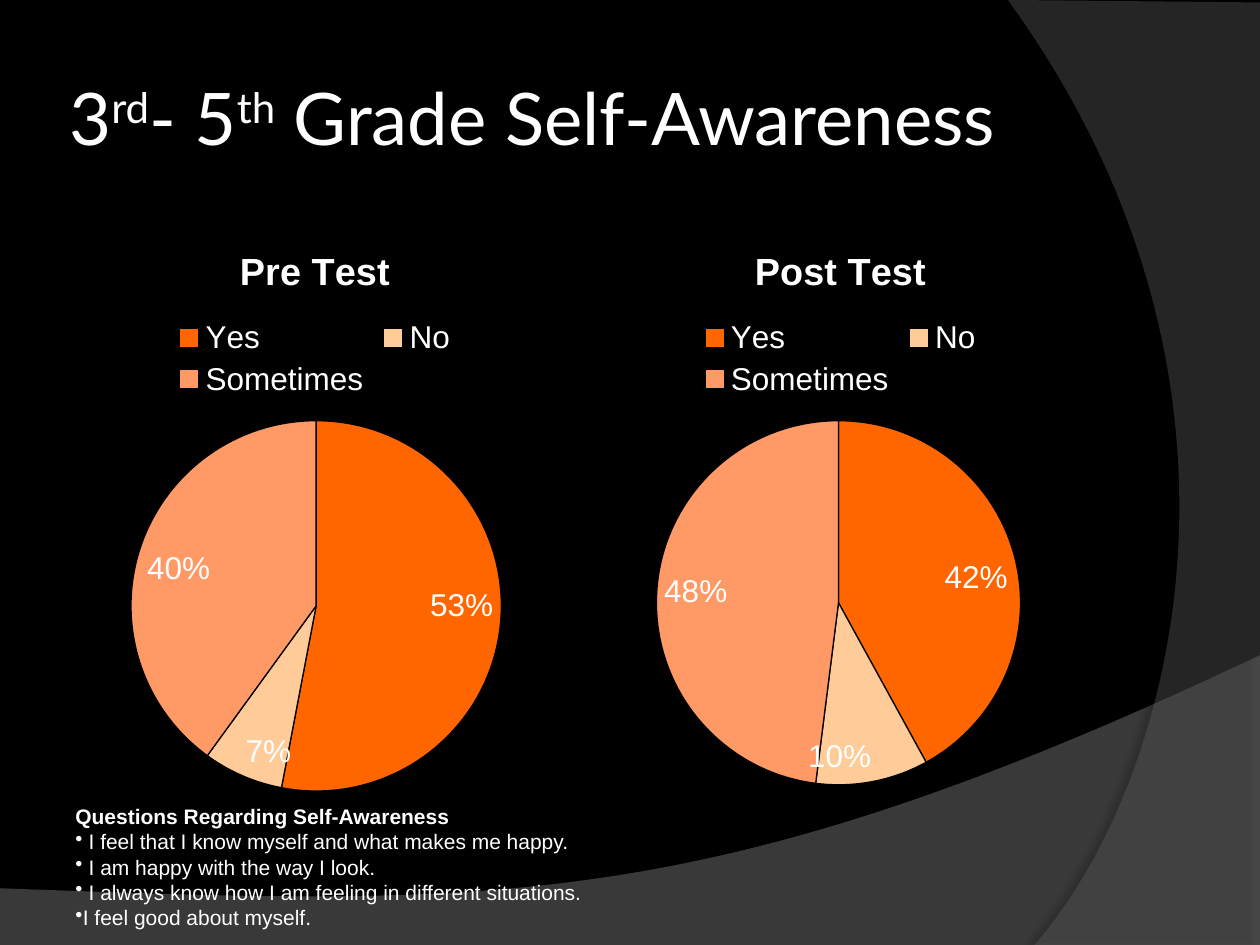
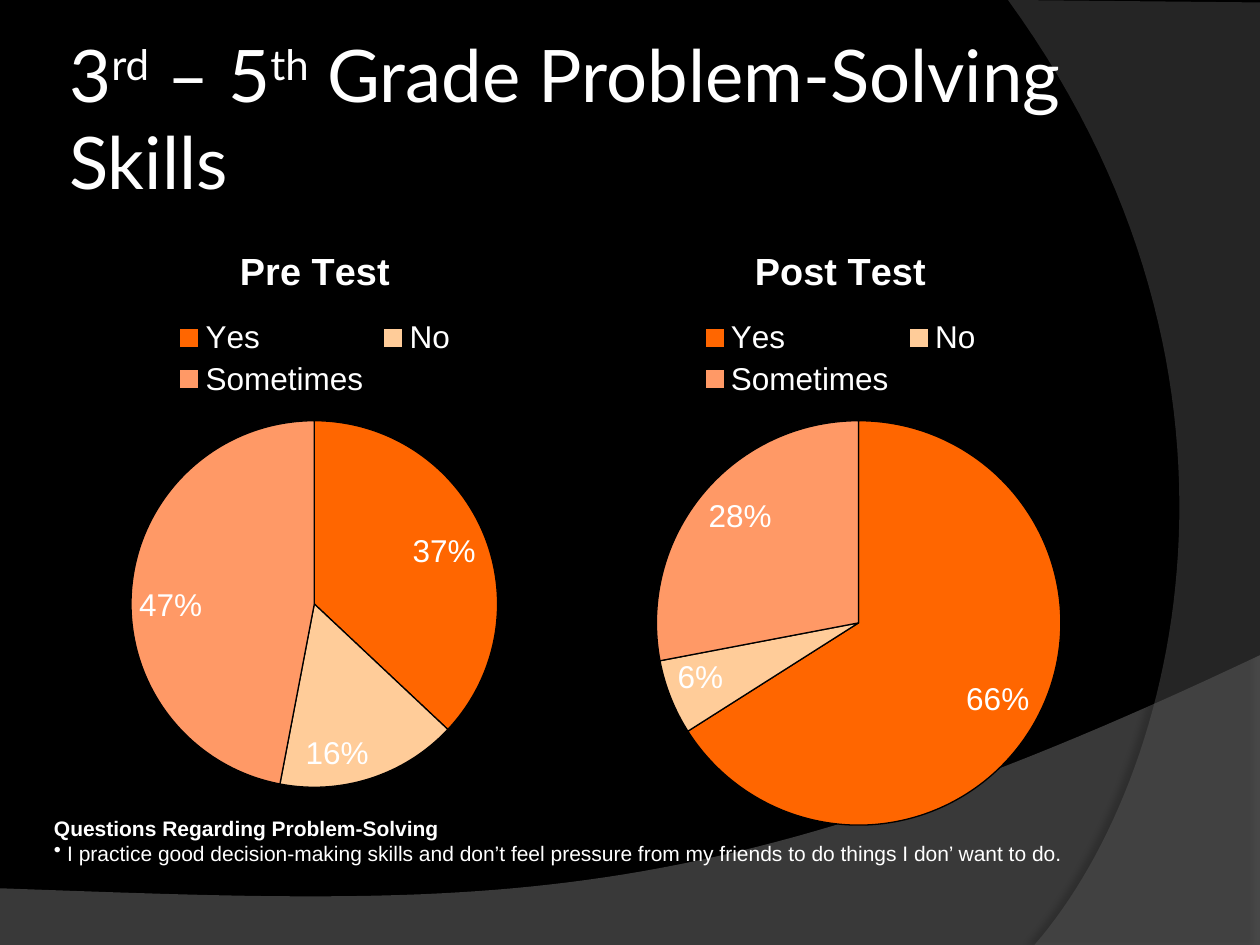
import pptx
import pptx.chart.data
import pptx.dml.color
import pptx.enum.chart
import pptx.enum.text
import pptx.oxml
import pptx.oxml.ns
import pptx.util
from lxml import etree

COLORS = {
    "back": "000000",
    "text": "FFFFFF",
    "wave": "7F7F7F",
    "arc": "5E5E5E",
    "Yes": "FF6600",
    "No": "FFCC99",
    "Sometimes": "FF9966",
}
ANSWERS = ["Yes", "No", "Sometimes"]
TITLE_FONT, BODY_FONT = "Lato", "Arial"
COLUMNS, ROWS = 100, 75
CELL = pptx.util.Inches(0.1)
TITLE_BOX = (5, 3, 81.7, 12.5)
CHART_BOXES = {"Pre Test": (5, 17.5, 40, 49.5), "Post Test": (46.7, 17.5, 40, 49.5)}
WAVE_BOX, ARC_BOX = (0, 52, 100, 23.1), (80, 0, 20, 75)

SLIDES = [
    {
        "title": ["3", "rd", "- 5", "th", " Grade Self-Awareness"],
        "tests": {"Pre Test": ([53, 7, 40], 29.4), "Post Test": ([42, 10, 48], 28.9)},
        "questions_box": (5, 63.3, 87.5, 11.1),
        "questions": [
            "Questions Regarding Self-Awareness",
            " I feel that I know myself and what makes me happy.",
            " I am happy with the way I look.",
            " I always know how I am feeling in different situations.",
            "I feel good about myself.",
        ],
    },
    {
        "title": ["3", "rd", " – 5", "th", " Grade Problem-Solving Skills"],
        "tests": {"Pre Test": ([37, 16, 47], 29.1), "Post Test": ([66, 6, 28], 32.1)},
        "questions_box": (3.3, 64.2, 85.8, 7.1),
        "questions": [
            "Questions Regarding Problem-Solving",
            " I practice good decision-making skills and don’t feel pressure"
            " from my friends to do things I don’ want to do.",
        ],
    },
]


def cells(values):
    return [pptx.util.Emu(round(value * CELL)) for value in values]


def rgb(name):
    return pptx.dml.color.RGBColor.from_string(COLORS[name])


def style(font, size, name=BODY_FONT, bold=False):
    font.size = pptx.util.Pt(size)
    font.name = name
    font.bold = bold
    font.color.rgb = rgb("text")


def add_child(parent, tag, **attributes):
    child = etree.SubElement(parent, pptx.oxml.ns.qn(tag))
    for key, value in attributes.items():
        child.set(key, str(value))
    return child


def curve(start, first, second, end, steps=60):
    for step in range(1, steps + 1):
        t = step / steps
        weights = ((1 - t) ** 3, 3 * t * (1 - t) ** 2, 3 * t * t * (1 - t), t ** 3)
        yield tuple(
            sum(weight * point[axis] for weight, point in zip(weights, (start, first, second, end)))
            for axis in (0, 1)
        )


def add_band(page, box, corners, bend, color, opacity, shadow):
    outline = corners + list(curve(corners[-1], *bend))
    points = [cells((box[0] + x, box[1] + y)) for x, y in outline]
    builder = page.shapes.build_freeform(*points[0])
    builder.add_line_segments(points[1:], close=True)
    band = builder.convert_to_shape()
    band.fill.solid()
    band.fill.fore_color.rgb = rgb(color)
    band.line.fill.background()
    band.shadow.inherit = False
    properties = band.element.spPr
    tint = properties.find(".//" + pptx.oxml.ns.qn("a:srgbClr"))
    add_child(tint, "a:alpha", val=opacity * 1000)
    strength, distance, angle = shadow
    effects = properties.find(pptx.oxml.ns.qn("a:effectLst"))
    cast = add_child(
        effects, "a:outerShdw", blurRad=pptx.util.Pt(4), dist=pptx.util.Pt(distance),
        dir=angle * 60000, algn="ctr", rotWithShape=0,
    )
    shade = add_child(cast, "a:srgbClr", val=COLORS["back"])
    add_child(shade, "a:alpha", val=strength * 1000)


def add_backdrop(page):
    page.background.fill.solid()
    page.background.fill.fore_color.rgb = rgb("back")
    add_band(
        page, WAVE_BOX, [(0, 18.5), (0, 23.1), (100, 23.1), (100, 0)],
        [(55.9, 20.9), (39.1, 19.9), (0, 18.5)], "wave", 45, (35, 3.5, 270),
    )
    add_band(
        page, ARC_BOX, [(20, 0.2), (20, 75), (2.1, 75)],
        [(13.5, 61.9), (21.8, 30), (0, 0)], "arc", 40, (45, 4, 180),
    )


def add_title(page, box, pieces):
    frame = page.shapes.add_textbox(*cells(box)).text_frame
    frame.word_wrap = True
    frame.vertical_anchor = pptx.enum.text.MSO_ANCHOR.MIDDLE
    frame.margin_left = frame.margin_right = pptx.util.Inches(0.05)
    para = frame.paragraphs[0]
    for index, piece in enumerate(pieces):
        span = para.add_run()
        span.text = piece
        style(span.font, 41.4, TITLE_FONT)
        if index % 2:
            span.font._element.set("baseline", "30000")


def place_pie(chart, box, diameter):
    plot_area = chart._chartSpace.chart.plotArea
    layout = plot_area.find(pptx.oxml.ns.qn("c:layout"))
    if layout is None:
        layout = pptx.oxml.parse_xml("<c:layout %s/>" % pptx.oxml.ns.nsdecls("c"))
        plot_area.insert(0, layout)
    manual = add_child(layout, "c:manualLayout")
    for tag, value in (("layoutTarget", "inner"), ("xMode", "edge"), ("yMode", "edge")):
        add_child(manual, "c:" + tag, val=value)
    shares = {"x": 5.4 / box[2], "y": 15.9 / box[3], "w": diameter / box[2], "h": diameter / box[3]}
    for tag, value in shares.items():
        add_child(manual, "c:" + tag, val=round(value, 4))


def add_pie(page, box, name, values, diameter):
    data = pptx.chart.data.CategoryChartData()
    data.categories = ANSWERS
    data.add_series(name, values)
    kind = pptx.enum.chart.XL_CHART_TYPE.PIE
    chart = page.shapes.add_chart(kind, *cells(box), data).chart
    style(chart.font, 18)
    chart.has_title = True
    chart.chart_title.text_frame.text = name
    style(chart.chart_title.text_frame.paragraphs[0].runs[0].font, 21.6, bold=True)
    chart.has_legend = True
    chart.legend.position = pptx.enum.chart.XL_LEGEND_POSITION.TOP
    chart.legend.include_in_layout = False
    style(chart.legend.font, 18)
    plot = chart.plots[0]
    plot.vary_by_categories = True
    for index, answer in enumerate(ANSWERS):
        wedge = plot.series[0].points[index].format
        wedge.fill.solid()
        wedge.fill.fore_color.rgb = rgb(answer)
        wedge.line.color.rgb = rgb("back")
        wedge.line.width = pptx.util.Pt(0.75)
    plot.has_data_labels = True
    labels = plot.data_labels
    labels.show_percentage = True
    labels.show_value = False
    labels.number_format = "0%"
    labels.number_format_is_linked = False
    labels.position = pptx.enum.chart.XL_LABEL_POSITION.INSIDE_END
    style(labels.font, 18)
    place_pie(chart, box, diameter)


def add_questions(page, box, lines):
    frame = page.shapes.add_textbox(*cells(box)).text_frame
    frame.word_wrap = True
    frame.text = "\n".join(lines)
    for index, para in enumerate(frame.paragraphs):
        style(para.runs[0].font, 12, bold=index == 0)
        if index:
            add_child(para._p.get_or_add_pPr(), "a:buChar", char="•")


def build_page(deck, content):
    page = deck.slides.add_slide(deck.slide_layouts[6])
    add_backdrop(page)
    add_title(page, TITLE_BOX, content["title"])
    for name, (values, diameter) in content["tests"].items():
        add_pie(page, CHART_BOXES[name], name, values, diameter)
    add_questions(page, content["questions_box"], content["questions"])


def main():
    deck = pptx.Presentation()
    deck.slide_width, deck.slide_height = cells((COLUMNS, ROWS))
    for content in SLIDES:
        build_page(deck, content)
    deck.save("out.pptx")


if __name__ == "__main__":
    main()
